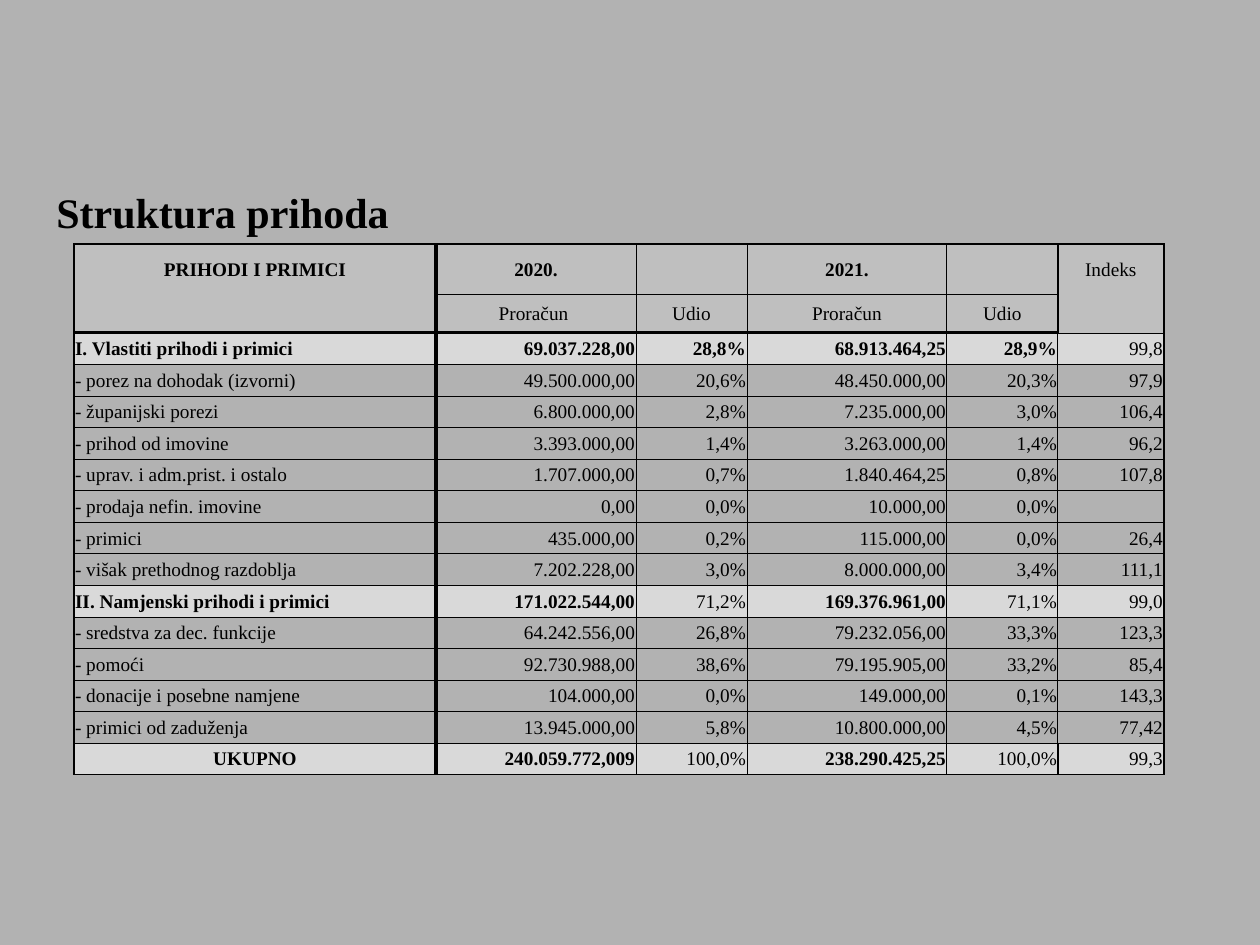
from pptx import Presentation
from pptx.dml.color import RGBColor
from pptx.enum.text import MSO_ANCHOR as ANCHOR, PP_ALIGN as ALIGN
from pptx.oxml.ns import qn
from pptx.util import Pt
from lxml.etree import SubElement as Sub

SCALE = 914400 / 126
FONT = "Times New Roman"
BLACK = RGBColor(0x00, 0x00, 0x00)
BACK = RGBColor(0xB2, 0xB2, 0xB2)
HEAD = RGBColor(0xBF, 0xBF, 0xBF)
BAND = RGBColor(0xD9, 0xD9, 0xD9)

# Line weights in points
THIN, MID, THICK = 0.5, 1, 2

COLS = [362, 200, 111, 200, 111, 106]
ROWS = [
    ["PRIHODI I PRIMICI", "2020.", "", "2021.", "", "Indeks"],
    ["", "Proračun ", "Udio", "Proračun", "Udio", ""],
    ["I. Vlastiti prihodi i primici", "69.037.228,00", "28,8%", "68.913.464,25", "28,9%", "99,8"],
    ["- porez na dohodak (izvorni)", "49.500.000,00", "20,6%", "48.450.000,00", "20,3%", "97,9"],
    ["- županijski porezi", "6.800.000,00", "2,8%", "7.235.000,00", "3,0%", "106,4"],
    ["- prihod od imovine", "3.393.000,00", "1,4%", "3.263.000,00", "1,4%", "96,2"],
    ["- uprav. i adm.prist. i ostalo", "1.707.000,00", "0,7%", "1.840.464,25", "0,8%", "107,8"],
    ["- prodaja nefin. imovine", "0,00", "0,0%", "10.000,00", "0,0%", ""],
    ["- primici", "435.000,00", "0,2%", "115.000,00", "0,0%", "26,4"],
    ["- višak prethodnog razdoblja", "7.202.228,00", "3,0%", "8.000.000,00", "3,4%", "111,1"],
    ["II. Namjenski prihodi i primici", "171.022.544,00", "71,2%", "169.376.961,00", "71,1%", "99,0"],
    ["- sredstva za dec. funkcije", "64.242.556,00", "26,8%", "79.232.056,00", "33,3%", "123,3"],
    ["- pomoći", "92.730.988,00", "38,6%", "79.195.905,00", "33,2%", "85,4"],
    ["- donacije i posebne namjene", "104.000,00", "0,0%", "149.000,00", "0,1%", "143,3"],
    ["- primici od zaduženja", "13.945.000,00", "5,8%", "10.800.000,00", "4,5%", "77,42"],
    ["UKUPNO", "240.059.772,009", "100,0%", "238.290.425,25", "100,0%", "99,3"],
]
LAST = len(ROWS) - 1
HEADS = [50, 39]
BODY = 442  # height of all rows below the two header rows
BOLD = {0: (0, 1, 3), 2: (0, 1, 2, 3, 4), 10: (0, 1, 3), LAST: (0, 1, 3)}


def px(n):
    return round(n * SCALE)


def write(frame, text, size=11, bold=False, align=ALIGN.LEFT):
    para = frame.paragraphs[0]
    para.alignment = align
    if not text:
        # An empty cell needs its own size, or its row grows
        para._p.get_or_add_endParaRPr().set("sz", str(size * 100))
        return
    run = para.add_run()
    run.text = text
    font = run.font
    font.name, font.size, font.bold = FONT, Pt(size), bold
    font.color.rgb = BLACK


def upright(row, edge):
    """Weight of the vertical line at a column edge."""
    if edge == 1:
        return THICK
    if edge in (0, len(COLS)) or edge == 5 and row in (0, 1, LAST):
        return MID
    return THIN


def level(edge, col):
    """Weight of the horizontal line at a row edge."""
    if edge in (0, len(ROWS)):
        return MID
    if edge == 1 and col in (0, 5):
        return 0
    if edge == 2 and col != 5:
        return THICK
    return THIN


def border(cell, row, col):
    props = cell._tc.get_or_add_tcPr()
    sides = {"L": upright(row, col), "R": upright(row, col + 1),
             "T": level(row, col), "B": level(row + 1, col)}
    for side, weight in sides.items():
        line = Sub(props, qn(f"a:ln{side}"), w=str(Pt(weight)))
        if weight:
            fill = Sub(line, qn("a:solidFill"))
            Sub(fill, qn("a:srgbClr"), val=str(BLACK))
        else:
            Sub(line, qn("a:noFill"))


def paint(cell, row):
    if row < 2 or row in BOLD:
        cell.fill.solid()
        cell.fill.fore_color.rgb = HEAD if row < 2 else BAND
    else:
        cell.fill.background()


def place(row, col):
    if row < 2 or (row == LAST and col == 0):
        return ALIGN.CENTER
    return ALIGN.RIGHT if col else ALIGN.LEFT


def add_title(slide):
    box = slide.shapes.add_textbox(px(44), px(175), px(1198), px(701))
    frame = box.text_frame
    frame.word_wrap = True
    frame.margin_top = px(11)
    write(frame, "Struktura prihoda", size=24, bold=True)


def add_grid(slide):
    shape = slide.shapes.add_table(len(ROWS), len(COLS), px(74), px(244),
                                   px(sum(COLS)), px(sum(HEADS) + BODY))
    table = shape.table
    table.first_row = table.horz_banding = False
    for col, wide in zip(table.columns, COLS):
        col.width = px(wide)
    tall = BODY / (len(ROWS) - len(HEADS))
    for r, texts in enumerate(ROWS):
        table.rows[r].height = px(HEADS[r] if r < 2 else tall)
        for c, text in enumerate(texts):
            cell = table.cell(r, c)
            cell.margin_left = cell.margin_right = cell.margin_top = px(1)
            cell.margin_bottom = 0
            cell.vertical_anchor = ANCHOR.MIDDLE
            write(cell.text_frame, text, bold=c in BOLD.get(r, ()), align=place(r, c))
            border(cell, r, c)
            paint(cell, r)


def main():
    deck = Presentation()
    deck.slide_width, deck.slide_height = px(1260), px(945)
    slide = deck.slides.add_slide(deck.slide_layouts[6])
    fill = slide.background.fill
    fill.solid()
    fill.fore_color.rgb = BACK
    add_title(slide)
    add_grid(slide)
    deck.save("out.pptx")


if __name__ == "__main__":
    main()
